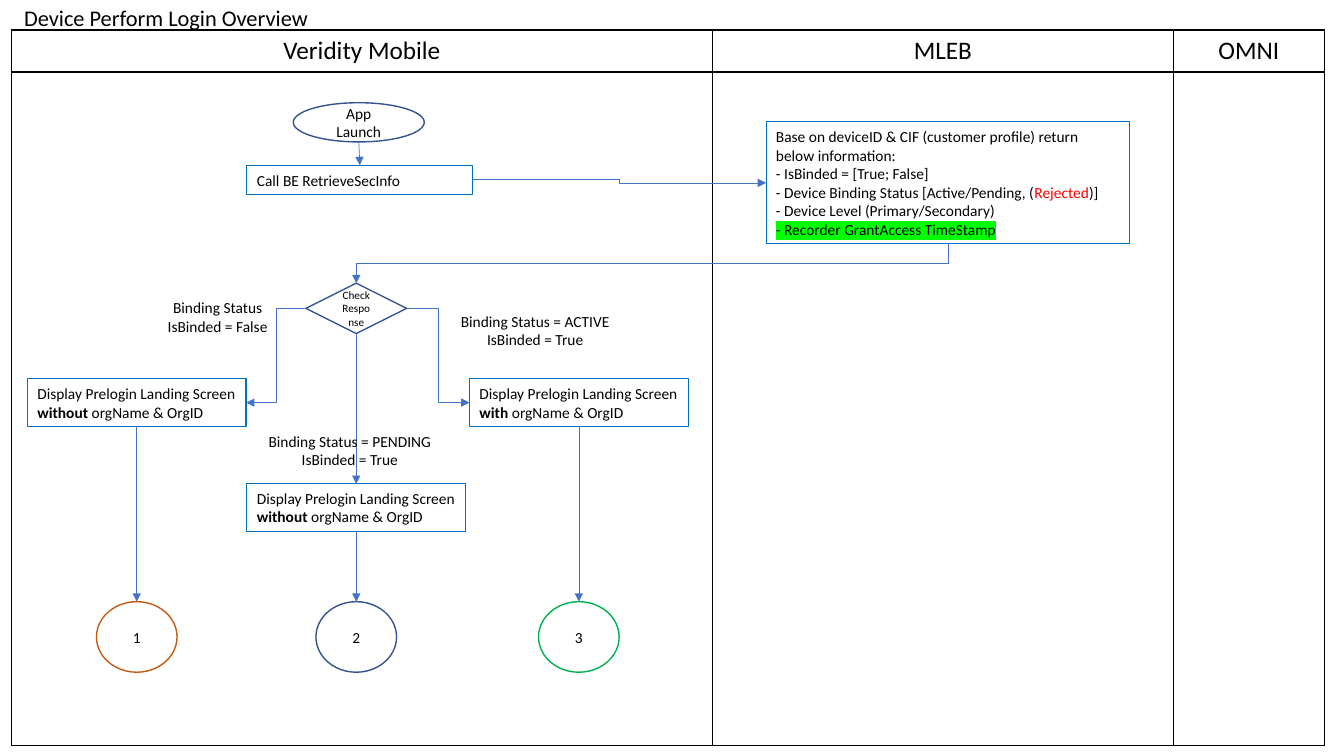
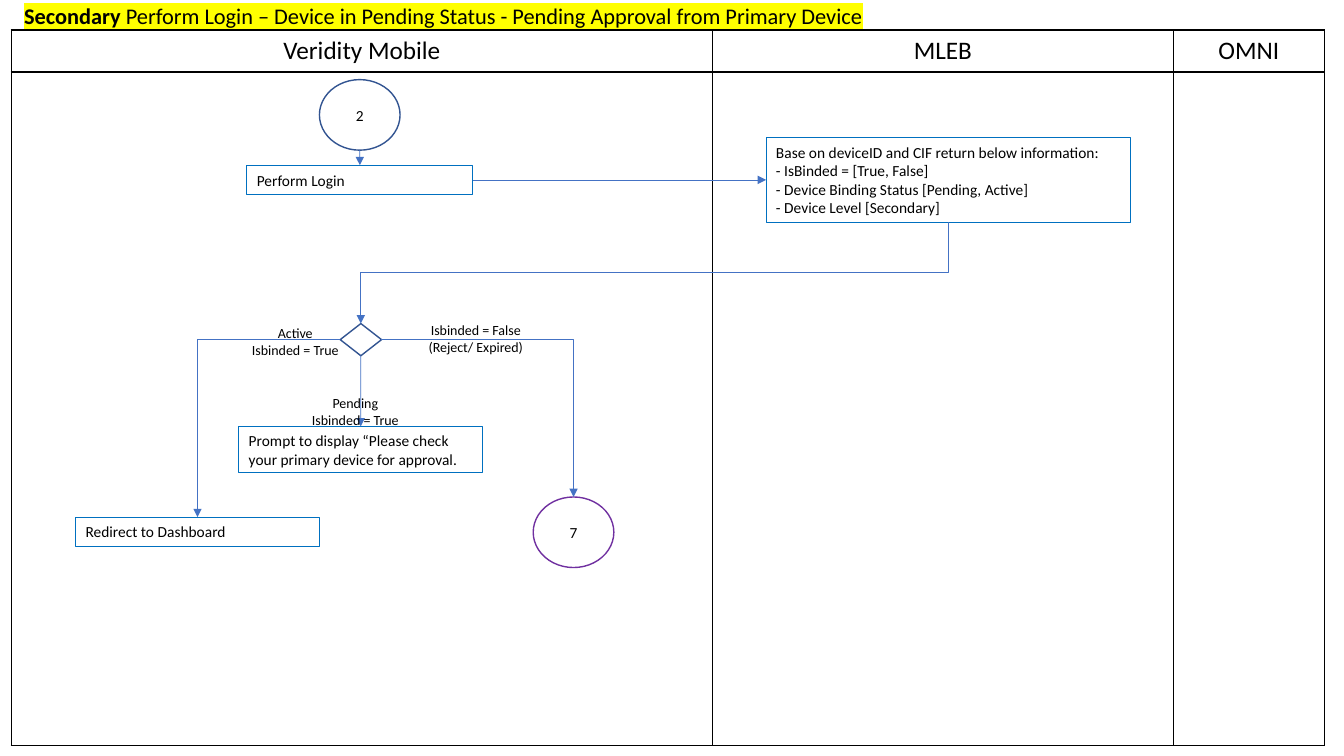
"""Build the two login flow swimlane slides."""
from lxml import etree
from pptx import Presentation
from pptx.dml.color import RGBColor
from pptx.enum.dml import MSO_FILL
from pptx.enum.shapes import MSO_CONNECTOR, MSO_SHAPE
from pptx.enum.text import MSO_ANCHOR, MSO_AUTO_SIZE, PP_ALIGN
from pptx.oxml.ns import qn
from pptx.util import Pt

RECT, OVAL, DIAMOND = MSO_SHAPE.RECTANGLE, MSO_SHAPE.OVAL, MSO_SHAPE.DIAMOND
STRAIGHT, ELBOW = MSO_CONNECTOR.STRAIGHT, MSO_CONNECTOR.ELBOW
LEFT, CENTER = PP_ALIGN.LEFT, PP_ALIGN.CENTER
TOP_ANCHOR, MIDDLE = MSO_ANCHOR.TOP, MSO_ANCHOR.MIDDLE
NO_FIT, SOLID = MSO_AUTO_SIZE.NONE, MSO_FILL.SOLID
TOP, LEFT_SIDE, BOTTOM, RIGHT_SIDE = range(4)

FONT = "Calibri"
COLORS = {
    "text": "000000", "red": "FF0000", "grid": "000000",
    "box": "0070C0", "node": "325491", "arrow": "4472C4",
    "orange": "C55A11", "green": "00B050", "purple": "7030A0",
    "lime": "00FF00", "yellow": "FFFF00",
}
LANES = [("Veridity Mobile", 501), ("MLEB", 329), ("OMNI", 108)]
LANE_ROWS = (30, 481)
SCREEN_W, SCREEN_H = 156.2, 33.8
CIRCLE_W, CIRCLE_H = 57.6, 50.4
CALL_BOX = (176.4, 118, 161.3, 21)


def rgb(name):
    """Return the named colour."""
    return RGBColor.from_string(COLORS[name])


def highlight(r, name):
    """Put a marker colour behind a run."""
    mark = etree.Element(qn("a:highlight"))
    etree.SubElement(mark, qn("a:srgbClr")).set("val", COLORS[name])
    r.font._element.find(qn("a:solidFill")).addnext(mark)


def style_run(r, size, bold=False, color="text", mark=None):
    """Format one run."""
    r.font.name, r.font.size, r.font.bold = FONT, Pt(size), bold
    r.font.color.rgb = rgb(color)
    if mark:
        highlight(r, mark)


def write(tf, paragraphs, size=11, align=LEFT, anchor=MIDDLE):
    """Fill a text frame; a paragraph is a string or a list of (text, style) runs."""
    tf.word_wrap, tf.auto_size, tf.vertical_anchor = True, NO_FIT, anchor
    for i, content in enumerate(paragraphs):
        p = tf.add_paragraph() if i else tf.paragraphs[0]
        p.alignment = align
        runs = [(content, {})] if isinstance(content, str) else content
        for text, style in runs:
            r = p.add_run()
            r.text = text
            style_run(r, size, **style)


def add_title(slide, runs, top, width):
    """Place and fill the title placeholder."""
    sp = slide.shapes.title
    sp.left, sp.top, sp.width, sp.height = Pt(10), Pt(top), Pt(width), Pt(26.6)
    write(sp.text_frame, [runs], 16)


def add_border(tc_pr, side):
    """Add one cell border."""
    ln = etree.SubElement(tc_pr, qn("a:" + side), w=str(Pt(1)))
    fill = etree.SubElement(ln, qn("a:solidFill"))
    etree.SubElement(fill, qn("a:srgbClr")).set("val", COLORS["grid"])


def add_lanes(slide):
    """Draw the swimlane table."""
    width = sum(w for _, w in LANES)
    table = slide.shapes.add_table(len(LANE_ROWS), len(LANES), Pt(8), Pt(21.4),
                                   Pt(width), Pt(sum(LANE_ROWS))).table
    table.first_row = table.horz_banding = False
    for row, height in zip(table.rows, LANE_ROWS):
        row.height = Pt(height)
    for i, (name, lane_width) in enumerate(LANES):
        table.columns[i].width = Pt(lane_width)
        write_header(table.cell(0, i), name)
    for cell in table.iter_cells():
        tc_pr = cell._tc.get_or_add_tcPr()
        for side in ("lnL", "lnR", "lnT", "lnB"):
            add_border(tc_pr, side)
        cell.fill.background()


def write_header(cell, name):
    """Write a lane name."""
    p = cell.text_frame.paragraphs[0]
    p.text, p.alignment = name, CENTER
    style_run(p.runs[0], 18)


def add_node(slide, kind, box, paragraphs=(), line="node", size=11, anchor=MIDDLE):
    """Add an outlined flowchart shape."""
    sp = slide.shapes.add_shape(kind, *map(Pt, box))
    sp.shadow.inherit = False
    sp.fill.background()
    sp.line.color.rgb = rgb(line)
    sp.line.width = Pt(0.75 if kind == RECT else 1)
    write(sp.text_frame, paragraphs, size, LEFT if kind == RECT else CENTER, anchor)
    return sp


def add_box(slide, box, paragraphs, anchor=MIDDLE):
    """Add a process box."""
    return add_node(slide, RECT, box, paragraphs, "box", anchor=anchor)


def add_circle(slide, left, top, number, line="node"):
    """Add a numbered reference circle."""
    return add_node(slide, OVAL, (left, top, CIRCLE_W, CIRCLE_H), [number], line)


def add_label(slide, box, paragraphs, size=11):
    """Add a branch label."""
    sp = slide.shapes.add_textbox(*map(Pt, box))
    write(sp.text_frame, paragraphs, size, CENTER)


def add_screen(slide, left, top, word):
    """Add a landing screen box."""
    return add_box(slide, (left, top, SCREEN_W, SCREEN_H), [[
        ("Display Prelogin Landing Screen ", {}), (word + " ", {"bold": True}),
        ("orgName & OrgID", {})]])


def side_point(sp, side):
    """Return the middle of a shape's side."""
    x, y = sp.left + sp.width // 2, sp.top + sp.height // 2
    return {TOP: (x, sp.top), LEFT_SIDE: (sp.left, y),
            BOTTOM: (x, sp.top + sp.height), RIGHT_SIDE: (sp.left + sp.width, y)}[side]


def add_arrow(slide, a, a_side, b, b_side, kind=STRAIGHT):
    """Join two shapes with an arrow."""
    c = slide.shapes.add_connector(kind, *side_point(a, a_side), *side_point(b, b_side))
    if a.auto_shape_type != OVAL:
        c.begin_connect(a, a_side)
    c.end_connect(b, b_side)
    c.line.color.rgb, c.line.width = rgb("arrow"), Pt(0.5)
    if c.line.fill.type == SOLID:
        etree.SubElement(c.line._get_or_add_ln(), qn("a:tailEnd"), type="triangle")
    etree.SubElement(c._element.spPr, qn("a:effectLst"))
    return c


def add_corner_arrow(slide, a, a_side, b):
    """Join a side to a top with a single bend."""
    c = add_arrow(slide, a, a_side, b, TOP, ELBOW)
    c._element.spPr.find(qn("a:prstGeom")).set("prst", "bentConnector2")


def add_return_arrow(slide, a, b):
    """Join a bottom to a top further left, leaving and arriving vertically."""
    c = add_arrow(slide, a, BOTTOM, b, TOP, ELBOW)
    (x1, y1), (x2, y2) = side_point(a, BOTTOM), side_point(b, TOP)
    w, h = y2 - y1, x1 - x2
    c.left, c.top = (x1 + x2 - w) // 2, (y1 + y2 - h) // 2
    c.width, c.height = w, h
    xfrm = c._element.spPr.find(qn("a:xfrm"))
    xfrm.attrib.pop("flipH", None)
    xfrm.set("rot", "5400000")


def add_lane_slide(prs, title, top, width):
    """Add a titled swimlane slide."""
    slide = prs.slides.add_slide(prs.slide_layouts[5])
    add_title(slide, title, top, width)
    add_lanes(slide)
    return slide


def build_overview(prs):
    """Build the login overview slide."""
    s = add_lane_slide(prs, [("Device Perform Login Overview", {})], -0.7, 470)
    launch = add_node(s, OVAL, (209.5, 73.4, 93.6, 28), ["App Launch"])
    call = add_box(s, CALL_BOX, ["Call BE RetrieveSecInfo"])
    info = add_box(s, (547.2, 87.1, 260, 87.1), [
        "Base on deviceID & CIF (customer profile) return below information:",
        "- IsBinded = [True; False]",
        [("- Device Binding Status [Active/Pending, (", {}),
         ("Rejected", {"color": "red"}), (")]", {})],
        "- Device Level (Primary/Secondary)",
        [("- Recorder GrantAccess TimeStamp", {"mark": "lime"})]])
    check = add_node(s, DIAMOND, (218.5, 202.3, 72, 36), ["Check Response"], size=8)
    add_arrow(s, launch, BOTTOM, call, TOP)
    add_arrow(s, call, RIGHT_SIDE, info, LEFT_SIDE, ELBOW)
    add_return_arrow(s, info, check)

    screens = []
    for left, top, word, number, line in (
            (19.6, 270.7, "without", "1", "orange"),
            (176.4, 345.6, "without", "2", "node"),
            (335.4, 270.7, "with", "3", "green")):
        screen = add_screen(s, left, top, word)
        circle = add_circle(s, left + (SCREEN_W - CIRCLE_W) / 2, 429.8, number, line)
        add_arrow(s, screen, BOTTOM, circle, TOP)
        screens.append(screen)
    add_arrow(s, check, LEFT_SIDE, screens[0], RIGHT_SIDE, ELBOW)
    add_arrow(s, check, BOTTOM, screens[1], TOP)
    add_arrow(s, check, RIGHT_SIDE, screens[2], LEFT_SIDE, ELBOW)

    add_label(s, (112.3, 212.4, 86.4, 28), ["Binding Status IsBinded = False"])
    add_label(s, (182.2, 308.9, 135.4, 25.2),
              ["Binding Status = PENDING", "IsBinded = True"])
    add_label(s, (321.8, 220.3, 121, 31), ["Binding Status = ACTIVE", "IsBinded = True"])


def build_pending(prs):
    """Build the pending approval slide."""
    s = add_lane_slide(prs, [
        ("Secondary", {"bold": True, "mark": "yellow"}),
        (" Perform Login – Device in Pending Status - Pending Approval from Primary Device",
         {"mark": "yellow"})], -2.5, 635)
    start = add_circle(s, 228.2, 56.9, "2")
    login = add_box(s, CALL_BOX, ["Perform Login"])
    info = add_box(s, (547.2, 98.3, 260.6, 60.4), [
        "Base on deviceID and CIF return below information:",
        "- IsBinded = [True, False]",
        "- Device Binding Status [Pending, Active]",
        "- Device Level [Secondary]"])
    check = add_node(s, DIAMOND, (243, 231.1, 29.5, 23))
    prompt = add_box(s, (170.6, 304.6, 174.2, 33.1), [
        "Prompt to display “Please check your primary device for approval."], TOP_ANCHOR)
    dashboard = add_box(s, (54, 369.4, 174.2, 20.9), ["Redirect to Dashboard"], TOP_ANCHOR)
    rejected = add_circle(s, 380.9, 355, "7", "purple")

    add_arrow(s, start, BOTTOM, login, TOP)
    add_arrow(s, login, RIGHT_SIDE, info, LEFT_SIDE)
    add_return_arrow(s, info, check)
    add_arrow(s, check, BOTTOM, prompt, TOP)
    add_corner_arrow(s, check, LEFT_SIDE, dashboard)
    add_corner_arrow(s, check, RIGHT_SIDE, rejected)

    for box, lines in (
            ((169.9, 231.8, 82, 23.8), ["Active", "Isbinded = True"]),
            ((195.1, 283, 117.4, 21.6), ["Pending", "Isbinded = True"]),
            ((270, 226, 139.7, 31.7), ["Isbinded = False", "(Reject/ Expired)"])):
        add_label(s, box, lines, 10)


def main():
    """Build and save the presentation."""
    prs = Presentation()
    prs.slide_width, prs.slide_height = Pt(960), Pt(540)
    build_overview(prs)
    build_pending(prs)
    prs.save("out.pptx")


if __name__ == "__main__":
    main()
